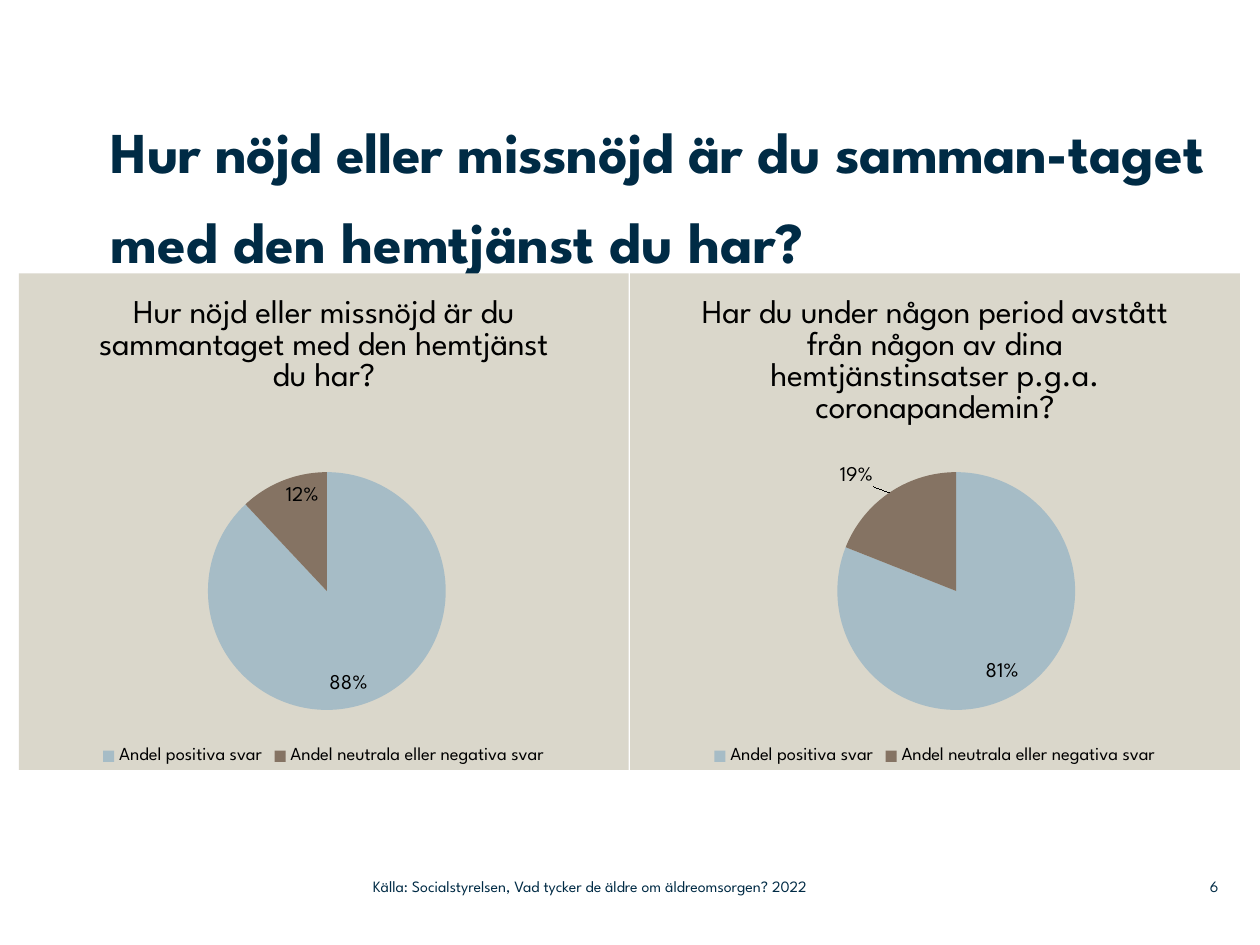
from lxml import etree
from pptx import Presentation
from pptx.chart.data import CategoryChartData
from pptx.dml.color import RGBColor
from pptx.enum.chart import XL_CHART_TYPE as ChartType, XL_LABEL_POSITION as LabelPosition, XL_LEGEND_POSITION as LegendPosition
from pptx.enum.text import MSO_ANCHOR as Anchor, PP_ALIGN as Align
from pptx.oxml import parse_xml
from pptx.oxml.ns import nsdecls, qn
from pptx.util import Inches, Pt

FONT = "League Spartan"
NAVY, BLACK, SAND = "002B45", "000000", "DAD7CB"
SLICE_COLORS = ("A6BCC6", "857363")
CATEGORIES = ("Andel positiva svar", "Andel neutrala eller negativa svar")
CHART_TOP, CHART_WIDTH, CHART_HEIGHT = 2.17, 4.84, 3.94


def rgb(color):
    return RGBColor.from_string(color)


def style_font(font, size, color, bold=False):
    font.name, font.size, font.bold = FONT, Pt(size), bold
    font.color.rgb = rgb(color)


def add_text(page, bounds, texts, size, bold=False, align=Align.LEFT,
             anchor=Anchor.MIDDLE, line_spacing=None):
    box = page.shapes.add_textbox(*map(Inches, bounds))
    frame = box.text_frame
    frame.word_wrap = True
    frame.vertical_anchor = anchor
    frame.margin_left = frame.margin_top = frame.margin_right = frame.margin_bottom = 0
    para = frame.paragraphs[0]
    para.alignment = align
    if line_spacing:
        para.line_spacing = line_spacing
    for text in texts:
        span = para.add_run()
        span.text = text
        style_font(span.font, size, NAVY, bold)
    return para


def manual_layout(**values):
    """Return a chart layout element; sizes and offsets are fractions of the chart."""
    parts = "".join(f'<c:{name} val="{value}"/>' for name, value in values.items())
    return parse_xml(f"<c:layout {nsdecls('c')}><c:manualLayout>{parts}"
                     "</c:manualLayout></c:layout>")


def set_plot_area(chart, x, y, width, height):
    area = chart._chartSpace.chart.plotArea
    for old in area.findall(qn("c:layout")):
        area.remove(old)
    area.insert(0, manual_layout(layoutTarget="inner", xMode="edge", yMode="edge",
                                 x=x, y=y, w=width, h=height))


def set_background(chart, color):
    fill = parse_xml(f"<c:spPr {nsdecls('c', 'a')}><a:solidFill><a:srgbClr val=\"{color}\"/>"
                     "</a:solidFill><a:ln><a:noFill/></a:ln></c:spPr>")
    chart._chartSpace.chart.addnext(fill)


def pull_label_out(series, index):
    """Place one percentage outside its slice, with a leader line."""
    label = series.points[index].data_label
    style_font(label.font, 12, BLACK)
    label.position = LabelPosition.OUTSIDE_END
    element = series._element.find(f".//{qn('c:dLbl')}")
    element.find(qn("c:idx")).addnext(manual_layout(x=-0.02, y=0))
    element.find(qn("c:showVal")).set("val", "0")
    element.find(qn("c:showPercent")).set("val", "1")
    labels = element.getparent()
    leader = labels.find(qn("c:showLeaderLines"))
    if leader is None:
        leader = etree.SubElement(labels, qn("c:showLeaderLines"))
    leader.set("val", "1")


def add_pie(page, left, title, values, plot_area, outside_point=None):
    data = CategoryChartData()
    data.categories = CATEGORIES
    data.add_series("Series 1", values)
    bounds = map(Inches, (left, CHART_TOP, CHART_WIDTH, CHART_HEIGHT))
    chart = page.shapes.add_chart(ChartType.PIE, *bounds, data).chart
    style_font(chart.font, 18, BLACK)
    set_background(chart, SAND)
    set_plot_area(chart, *plot_area)

    span = chart.chart_title.text_frame.paragraphs[0].add_run()
    span.text = title
    style_font(span.font, 19, BLACK)
    chart.has_legend = True
    chart.legend.position = LegendPosition.BOTTOM
    chart.legend.include_in_layout = False
    style_font(chart.legend.font, 10.5, BLACK)

    plot = chart.plots[0]
    plot.vary_by_categories = True
    series = plot.series[0]
    for index, color in enumerate(SLICE_COLORS):
        fill = series.points[index].format.fill
        fill.solid()
        fill.fore_color.rgb = rgb(color)
    labels = series.data_labels
    labels.show_value, labels.show_percentage = False, True
    labels.number_format, labels.number_format_is_linked = "0%", False
    labels.position = LabelPosition.INSIDE_END
    style_font(labels.font, 12, BLACK)
    if outside_point is not None:
        pull_label_out(series, outside_point)


def main():
    deck = Presentation()
    deck.slide_width, deck.slide_height = Inches(10), Inches(7.5)
    page = deck.slides.add_slide(deck.slide_layouts[6])

    heading = add_text(page, (0.88, 0.75, 8.94, 1.42),
                       ("Hur nöjd eller missnöjd är du samman-", "taget med den hemtjänst du har?"),
                       33, bold=True, anchor=Anchor.TOP, line_spacing=1.3)
    heading.runs[0].font._element.set("spc", "-30")
    add_pie(page, 5, "Har du under någon period avstått från någon av dina "
            "hemtjänstinsatser p.g.a. coronapandemin?", (81, 19),
            (0.34, 0.4, 0.39, 0.48), outside_point=1)
    add_pie(page, 0.15, "Hur nöjd eller missnöjd är du sammantaget med den hemtjänst du har?",
            (88, 12), (0.31, 0.4, 0.39, 0.48))
    add_text(page, (2.96, 6.89, 4.43, 0.29),
             ("Källa: Socialstyrelsen, Vad tycker de äldre om äldreomsorgen? 2022",), 9)
    add_text(page, (9.2, 6.89, 0.47, 0.29), ("6",), 9, align=Align.RIGHT)
    deck.save("out.pptx")


if __name__ == "__main__":
    main()
